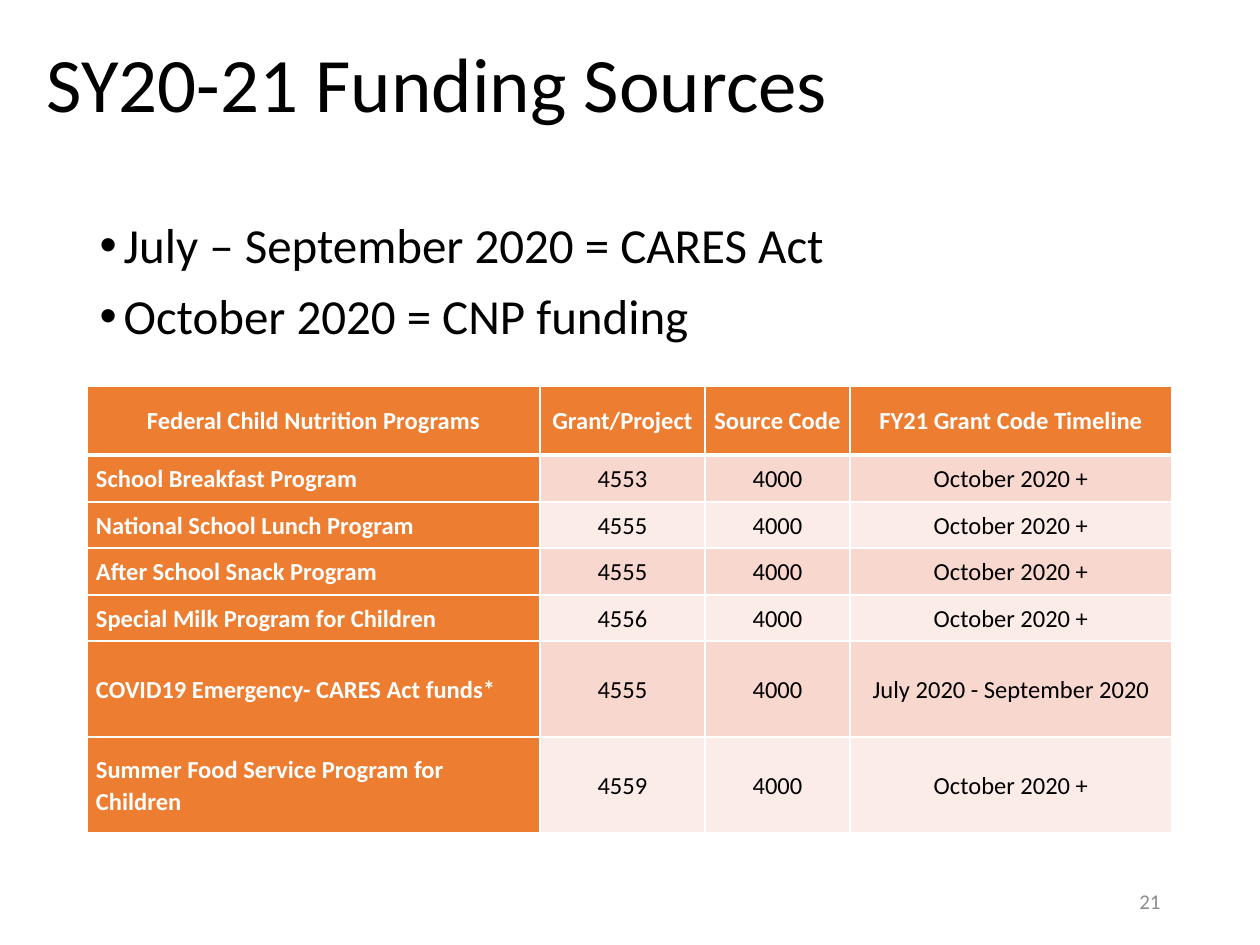
from lxml import etree
from pptx import Presentation
from pptx import util as u
from pptx.dml.color import RGBColor
from pptx.enum import text
from pptx.oxml import ns

EMU_PER_PX = 914400 / 126
FONT = "Calibri"
COLORS = {
    "ink": "000000",
    "white": "FFFFFF",
    "number": "8C8C8C",
    "accent": "ED7D31",
    "band_dark": "F8D7CE",
    "band_light": "FCECE8",
}
COLUMN_WIDTHS = [453, 165, 145, 322]
ROW_HEIGHTS = [69, 47, 46, 47, 46, 96, 96]
HEADERS = ["Federal Child Nutrition Programs", "Grant/Project", "Source Code", "FY21 Grant Code Timeline"]
PROGRAMS = [
    ("School Breakfast Program", "4553", "October 2020 +"),
    ("National School Lunch Program", "4555", "October 2020 +"),
    ("After School Snack Program", "4555", "October 2020 +"),
    ("Special Milk Program for Children", "4556", "October 2020 +"),
    ("COVID19 Emergency- CARES Act funds*", "4555", "July 2020 - September 2020"),
    ("Summer Food Service Program for Children", "4559", "October 2020 +"),
]
SOURCE_CODE = "4000"


def px(length):
    return u.Emu(round(length * EMU_PER_PX))


def place(holder, left, top, width, height):
    holder.left, holder.top = px(left), px(top)
    holder.width, holder.height = px(width), px(height)


def write(paragraph, words, size, color, align, spacing=1.0, bold=False):
    paragraph.alignment = align
    paragraph.line_spacing = spacing
    run = paragraph.add_run()
    run.text = words
    run.font.name = FONT
    run.font.size = u.Pt(size)
    run.font.bold = bold
    run.font.color.rgb = RGBColor.from_string(COLORS[color])


def add_bullet(paragraph):
    paragraph.space_before = u.Pt(10)
    properties = paragraph._p.get_or_add_pPr()
    properties.set("marL", str(px(24)))
    properties.set("indent", str(px(-24)))
    typeface = etree.SubElement(properties, ns.qn("a:buFont"))
    typeface.set("typeface", "Arial")
    etree.SubElement(properties, ns.qn("a:buChar")).set("char", "•")


def add_title(slide, words):
    title = slide.shapes.title
    place(title, 34, 35, 1139, 105)
    title.text_frame.vertical_anchor = text.MSO_ANCHOR.MIDDLE
    write(title.text_frame.paragraphs[0], words, 44, "ink", text.PP_ALIGN.LEFT, 0.9)


def add_list(slide, entries):
    body = slide.placeholders[1]
    place(body, 87, 215, 1086, 635)
    frame = body.text_frame
    for index, entry in enumerate(entries):
        paragraph = frame.add_paragraph() if index else frame.paragraphs[0]
        write(paragraph, entry, 28, "ink", text.PP_ALIGN.LEFT, 0.9)
        add_bullet(paragraph)


def add_page_number(slide, number):
    box = slide.shapes.add_textbox(px(890), px(876), px(283), px(50))
    box.text_frame.word_wrap = True
    box.text_frame.vertical_anchor = text.MSO_ANCHOR.MIDDLE
    write(box.text_frame.paragraphs[0], number, 12, "number", text.PP_ALIGN.RIGHT)


def set_borders(cell, widths):
    properties = cell._tc.get_or_add_tcPr()
    for side, width in widths.items():
        line = etree.SubElement(properties, ns.qn(f"a:ln{side}"), w=str(u.Pt(width)))
        fill = etree.SubElement(line, ns.qn("a:solidFill"))
        etree.SubElement(fill, ns.qn("a:srgbClr"), val=COLORS["white"])


def fill_cell(cell, words, row, column):
    is_label = row == 0 or column == 0
    band = "band_dark" if row % 2 else "band_light"
    top = 3 if row == 1 else 1
    bottom = 3 if row == 0 else 1
    set_borders(cell, {"L": 1, "R": 1, "T": top, "B": bottom})
    cell.fill.solid()
    cell.fill.fore_color.rgb = RGBColor.from_string(COLORS["accent" if is_label else band])
    cell.margin_left = cell.margin_right = px(9)
    cell.margin_top = cell.margin_bottom = 0
    cell.vertical_anchor = text.MSO_ANCHOR.MIDDLE
    align = text.PP_ALIGN.LEFT if row and column == 0 else text.PP_ALIGN.CENTER
    write(cell.text_frame.paragraphs[0], words, 14, "white" if is_label else "ink", align, 1.07, is_label)


def add_funding_table(slide):
    rows = [HEADERS] + [(name, grant, SOURCE_CODE, timeline) for name, grant, timeline in PROGRAMS]
    funding = slide.shapes.add_table(
        len(rows), len(HEADERS), px(87), px(386), px(sum(COLUMN_WIDTHS)), px(sum(ROW_HEIGHTS))
    ).table
    for column, width in zip(funding.columns, COLUMN_WIDTHS):
        column.width = px(width)
    for row, height in zip(funding.rows, ROW_HEIGHTS):
        row.height = px(height)
    for r, row in enumerate(rows):
        for c, words in enumerate(row):
            fill_cell(funding.cell(r, c), words, r, c)


def main():
    deck = Presentation()
    deck.slide_width, deck.slide_height = px(1260), px(945)
    slide = deck.slides.add_slide(deck.slide_layouts[1])
    add_title(slide, "SY20-21 Funding Sources")
    add_list(slide, ["July – September 2020 = CARES Act", "October 2020 = CNP funding"])
    add_page_number(slide, "21")
    add_funding_table(slide)
    deck.save("out.pptx")


if __name__ == "__main__":
    main()
